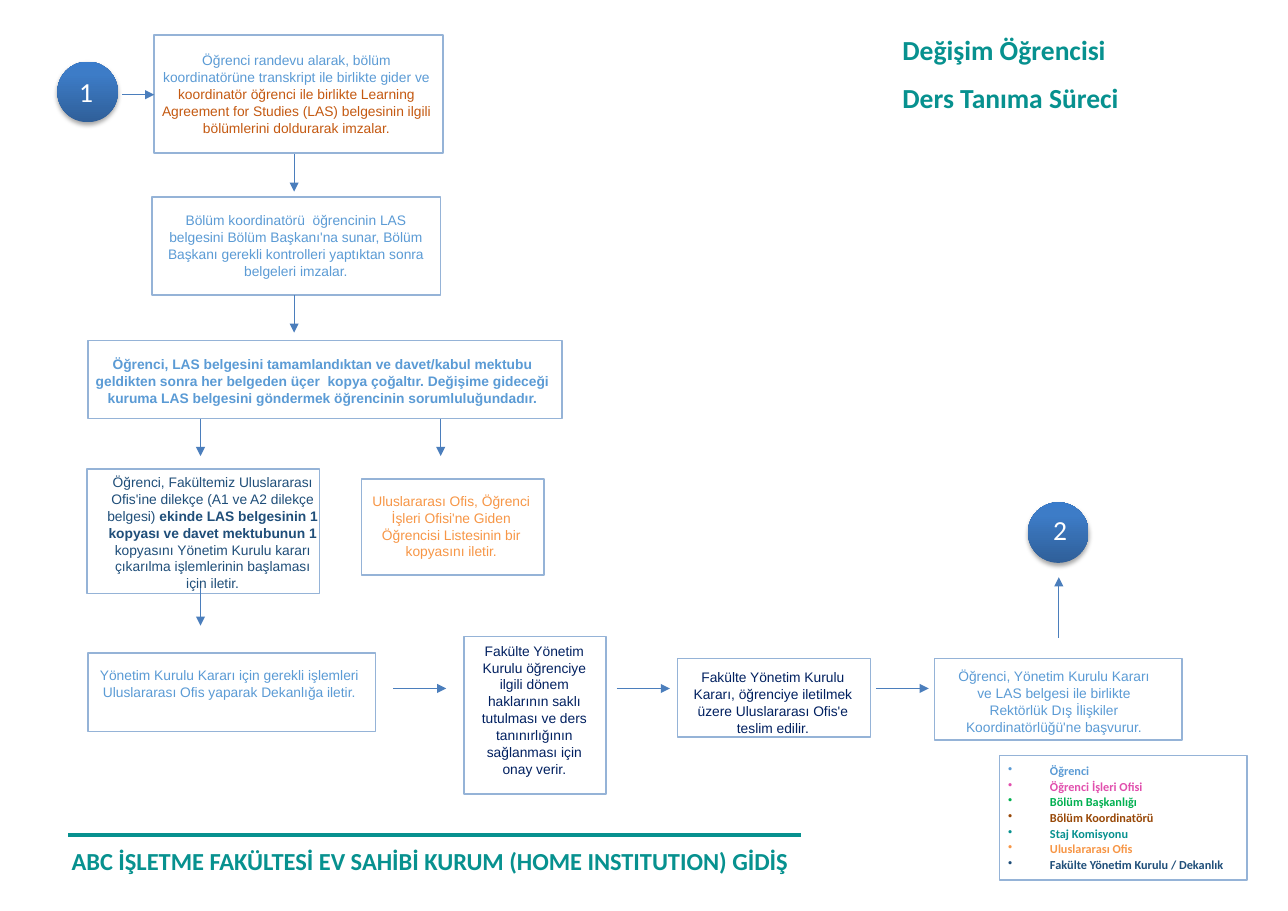
from copy import deepcopy
from dataclasses import dataclass

from lxml.etree import SubElement
from pptx import Presentation
from pptx.dml.color import RGBColor
from pptx.enum.shapes import MSO_CONNECTOR, MSO_SHAPE
from pptx.enum.text import MSO_AUTO_SIZE, PP_ALIGN
from pptx.oxml.ns import qn
from pptx.util import Inches, Pt


@dataclass(frozen=True)
class Theme:
    teal: str = "07918F"
    sky: str = "5B9BD5"
    navy: str = "1F4E79"
    ink: str = "002060"
    rust: str = "C45911"
    brown: str = "984807"
    orange: str = "F79646"
    pink: str = "E14FAD"
    green: str = "00B050"
    white: str = "FFFFFF"
    frame: str = "95B3D7"
    arrow: str = "4B7EBC"
    badge: tuple = ((0, "2F5F99"), (0.8, "3D7CC7"), (1, "3A7CCB"))
    heading: int = 18
    footer: int = 16
    body: int = 9
    legend: int = 8
    body_font: str = "Arial"
    title_font: str = "Calibri"


def rgb(code):
    return RGBColor.from_string(code)


def cells(n):
    """Length of n grid columns or rows; ten of them make an inch."""
    return Inches(n / 10)


def write(p, text, size, font, color, bold=False):
    r = p.add_run()
    r.text = text
    r.font.size, r.font.name, r.font.bold = Pt(size), font, bold
    r.font.color.rgb = rgb(color)


class FlowSlide:
    def __init__(self, prs, theme):
        self.theme = theme
        self.shapes = prs.slides.add_slide(prs.slide_layouts[6]).shapes

    def text(self, at, paragraphs, align=None, spacing=None, after=0,
             indent=0, bullet=None, inset=0, grow=False, **style):
        """Each paragraph is a list of (text, style overrides) runs."""
        tf = self.shapes.add_textbox(*map(cells, at)).text_frame
        tf.word_wrap = True
        if grow:
            tf.auto_size = MSO_AUTO_SIZE.SHAPE_TO_FIT_TEXT
        tf.margin_left = tf.margin_right = cells(inset)
        tf.margin_top = tf.margin_bottom = cells(inset / 2)
        for i, runs in enumerate(paragraphs):
            p = tf.add_paragraph() if i else tf.paragraphs[0]
            p.alignment, p.line_spacing = align, spacing
            p.space_after = Pt(after)
            pPr = p._p.get_or_add_pPr()
            if indent:
                pPr.set("marL", str(cells(indent)))
            if bullet:
                pPr.set("indent", str(-cells(indent)))
                SubElement(pPr, qn("a:buChar"), char=bullet)
            for words, changes in runs:
                write(p, words, **(style | changes))

    def frame(self, at):
        s = self.shapes.add_shape(MSO_SHAPE.RECTANGLE, *map(cells, at))
        s.shadow.inherit = False
        s.fill.background()
        s.line.color.rgb, s.line.width = rgb(self.theme.frame), Pt(1)

    def step(self, box, area, runs, color, bold=False, spacing=11):
        self.frame(box)
        self.text(area, [runs], align=PP_ALIGN.CENTER, spacing=Pt(spacing),
                  size=self.theme.body, font=self.theme.body_font,
                  color=color, bold=bold)

    def badge(self, x, y, number, digit_x, digit_y):
        s = self.shapes.add_shape(MSO_SHAPE.OVAL, *map(cells, (x, y, 5.5, 5.5)))
        s.line.fill.background()
        s.fill.gradient()
        s.fill.gradient_angle = 90
        stop_list = s._element.spPr.find(qn("a:gradFill")).find(qn("a:gsLst"))
        stop_list.append(deepcopy(stop_list[0]))
        for stop, (position, color) in zip(s.fill.gradient_stops, self.theme.badge):
            stop.position, stop.color.rgb = position, rgb(color)
        s.shadow.inherit = False
        shadow = SubElement(s._element.spPr.find(qn("a:effectLst")), qn("a:outerShdw"),
                            blurRad=str(Pt(3.1)), dist=str(Pt(1.8)),
                            dir="5400000", rotWithShape="0")
        shade = SubElement(shadow, qn("a:srgbClr"), val="000000")
        SubElement(shade, qn("a:alpha"), val="35000")
        self.text((digit_x, digit_y, 2.1, 4), [[(number, {})]], inset=1, grow=True,
                  size=self.theme.heading, font=self.theme.title_font,
                  color=self.theme.white)

    def line(self, x, y, dx, dy, color, width=0.75, arrow=True):
        c = self.shapes.add_connector(MSO_CONNECTOR.STRAIGHT,
                                      *map(cells, (x, y, x + dx, y + dy)))
        c.line.color.rgb, c.line.width = rgb(color), Pt(width)
        if arrow:
            SubElement(c.line._get_or_add_ln(), qn("a:tailEnd"), type="triangle")
        SubElement(c._element.spPr, qn("a:effectLst"))


def main():
    t = Theme()
    prs = Presentation()
    prs.slide_width, prs.slide_height = Inches(11.69), Inches(8.27)
    flow = FlowSlide(prs, t)

    flow.text((81.9, 2.8, 23.2, 8.9),
              [[("Değişim Öğrencisi", {})], [("Ders Tanıma Süreci", {})]],
              spacing=1.07, after=8, size=t.heading, font=t.title_font,
              color=t.teal, bold=True)

    flow.step((14, 3.2, 26.2, 10.7), (14.4, 4.7, 25, 7.7), [
        ("Öğrenci randevu alarak, bölüm koordinatörüne transkript ile birlikte gider ve ", {}),
        ("koordinatör öğrenci ile birlikte Learning Agreement for Studies (LAS) "
         "belgesinin ilgili bölümlerini doldurarak imzalar.", {"color": t.rust})], t.sky)
    flow.step((13.8, 17.9, 26.2, 8.9), (14.3, 19.2, 25.1, 7.1), [
        ("Bölüm koordinatörü  öğrencinin LAS belgesini Bölüm Başkanı'na sunar, "
         "Bölüm Başkanı gerekli kontrolleri yaptıktan sonra belgeleri imzalar.", {})], t.sky)
    flow.step((8, 30.9, 43, 7.1), (8.4, 32.2, 41.7, 5), [
        ("Öğrenci, LAS belgesini tamamlandıktan ve davet/kabul mektubu geldikten sonra "
         "her belgeden üçer  kopya çoğaltır. Değişime gideceği kuruma LAS belgesini "
         "göndermek öğrencinin sorumluluğundadır.", {})], t.sky, bold=True, spacing=11.2)
    flow.step((7.9, 42.6, 21.1, 11.3), (9.5, 43, 19.6, 12.1), [
        ("Öğrenci, Fakültemiz Uluslararası Ofis'ine dilekçe (A1 ve A2 dilekçe belgesi) ", {}),
        ("ekinde LAS belgesinin 1 kopyası ve davet mektubunun 1 ", {"bold": True}),
        ("kopyasını Yönetim Kurulu kararı çıkarılma işlemlerinin başlaması için iletir.", {})],
        t.navy)
    flow.step((32.8, 43.5, 16.6, 8.7), (33.7, 44.7, 14.5, 6.4), [
        ("Uluslararası Ofis, Öğrenci İşleri Ofisi'ne Giden Öğrencisi Listesinin "
         "bir kopyasını iletir.", {})], t.orange)
    flow.step((8, 59.3, 26.1, 7.1), (8.9, 60.5, 23.8, 4.7), [
        ("Yönetim Kurulu Kararı için gerekli işlemleri Uluslararası Ofis yaparak "
         "Dekanlığa iletir.", {})], t.sky)
    flow.step((42.1, 57.8, 12.9, 14.3), (43.5, 58.3, 10, 10.9), [
        ("Fakülte Yönetim Kurulu öğrenciye ilgili dönem haklarının saklı tutulması ve "
         "ders tanınırlığının sağlanması için onay verir.", {})], t.ink)
    flow.step((61.5, 59.8, 17.5, 7.1), (62.8, 60.7, 14.7, 5.9), [
        ("Fakülte Yönetim Kurulu Kararı, öğrenciye iletilmek üzere Uluslararası Ofis'e "
         "teslim edilir.", {})], t.ink)
    flow.step((84.8, 59.8, 22.5, 7.4), (86.2, 60.6, 18.9, 6.4), [
        ("Öğrenci, Yönetim Kurulu Kararı ve LAS belgesi ile birlikte Rektörlük Dış "
         "İlişkiler Koordinatörlüğü'ne başvurur.", {})], t.sky)

    flow.badge(5.2, 5.6, "1", 6.2, 6.3)
    flow.badge(93.3, 45.6, "2", 94.6, 46.1)

    for x, y in ((26.7, 14), (26.7, 26.8), (18.2, 38), (40, 38), (18.2, 53.4)):
        flow.line(x, y, 0, 3.4, t.arrow)
    for x in (35.7, 56, 79.5):
        flow.line(x, 62.5, 4.8, 0, t.arrow)
    flow.line(11.1, 8.6, 2.9, 0, t.arrow)
    flow.line(96.1, 57.9, 0, -5.5, t.arrow)

    flow.line(6.2, 75.8, 66.5, 0, t.teal, width=2.25, arrow=False)
    flow.text((4, 78.1, 70.4, 1),
              [[("ABC İŞLETME FAKÜLTESİ EV SAHİBİ KURUM (HOME INSTITUTION) GİDİŞ", {})]],
              spacing=Pt(9.6), indent=2.5, size=t.footer, font=t.title_font,
              color=t.teal, bold=True)

    legend = (("Öğrenci", t.sky), ("Öğrenci İşleri Ofisi", t.pink),
              ("Bölüm Başkanlığı", t.green), ("Bölüm Koordinatörü", t.brown),
              ("Staj Komisyonu", t.teal), ("Uluslararası Ofis", t.orange),
              ("Fakülte Yönetim Kurulu / Dekanlık", t.navy))
    flow.frame((90.7, 68.6, 22.5, 11.3))
    flow.text((91.5, 69.2, 20.9, 10.4),
              [[(unit, {"color": color})] for unit, color in legend],
              spacing=1.07, indent=3.8, bullet="•", size=t.legend,
              font=t.title_font, color=t.navy, bold=True)

    prs.save("out.pptx")


if __name__ == "__main__":
    main()
